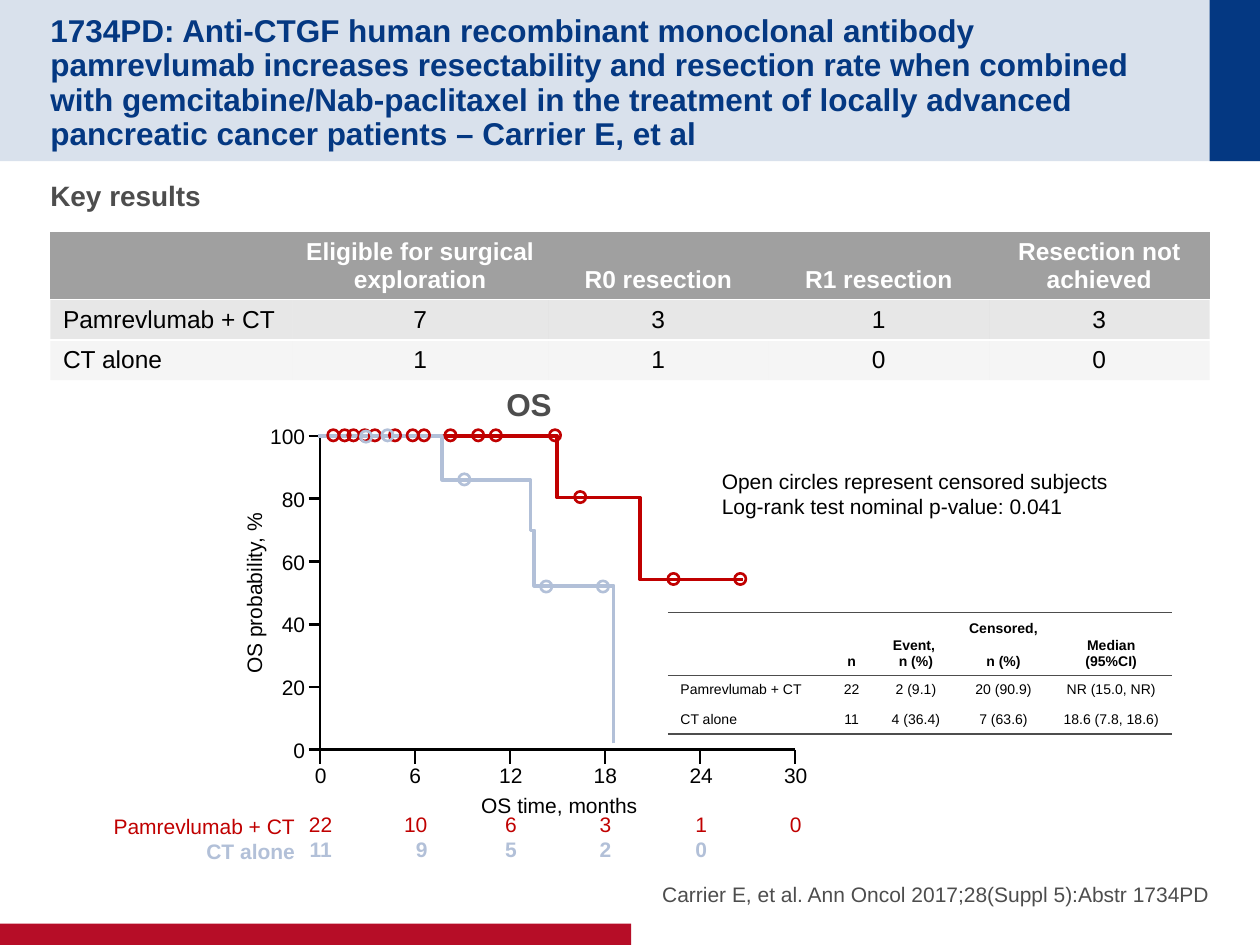
from typing import NamedTuple
from lxml.etree import SubElement
from pptx import Presentation
from pptx.dml.color import RGBColor as RGB
from pptx.enum.shapes import MSO_CONNECTOR as LINK, MSO_SHAPE as SHAPE
from pptx.enum.text import MSO_ANCHOR as ANCHOR, MSO_AUTO_SIZE as FIT, PP_ALIGN as ALIGN
from pptx.oxml.ns import qn
from pptx.util import Emu, Pt

PX = 9144  # EMU in one px, 100 px to the inch

NAVY = RGB(0x04, 0x38, 0x82)
CRIMSON = RGB(0xB6, 0x0D, 0x27)
RED = RGB(0xC0, 0x00, 0x00)
BLUE = RGB(0xB2, 0xC0, 0xD8)
DARK = RGB(0x4D, 0x4D, 0x4D)
GREY = RGB(0xA0, 0xA0, 0xA0)
BLACK = RGB(0, 0, 0)
WHITE = RGB(255, 255, 255)


class Box(NamedTuple):
    left: int
    top: int
    width: int
    height: int


class Band(NamedTuple):
    """Look of one table row: fill, its opacity, text and edges."""
    fill: RGB
    alpha: int
    color: RGB
    bold: bool
    edges: dict[str, RGB]


class Curve(NamedTuple):
    color: RGB
    steps: list[tuple[int, int]]
    marks: list[tuple[int, int]]


class Month(NamedTuple):
    label: str
    risk: list[str]
    align: ALIGN = ALIGN.CENTER


def emu(*sizes: float) -> list[Emu]:
    return [Emu(round(size * PX)) for size in sizes]


def write(frame, text: str, size=12, color=BLACK, bold=False,
          align=ALIGN.LEFT, before=0, after=0, lead=None) -> None:
    """Fill the first paragraph if it is empty, else add one."""
    para = frame.add_paragraph() if frame.text else frame.paragraphs[0]
    para.text = text
    para.alignment = align
    para.space_before, para.space_after = Pt(before), Pt(after)
    if lead:
        para.line_spacing = lead
    for run in para.runs:
        font = run.font
        font.name, font.size, font.bold = "Arial", Pt(size), bold
        font.color.rgb = color
    for gap in para._p.findall(qn("a:br")):
        SubElement(gap, qn("a:rPr"), sz=str(size * 100))


def label(box: Box, text="", anchor=ANCHOR.TOP, grow=True, inset=None, turn=0, **look):
    shape = slide.shapes.add_textbox(*emu(*box))
    shape.rotation = turn
    frame = shape.text_frame
    frame.word_wrap = not grow
    frame.auto_size = FIT.SHAPE_TO_FIT_TEXT if grow else FIT.NONE
    frame.vertical_anchor = anchor
    if inset is not None:
        frame.margin_left = frame.margin_right = 0
        frame.margin_top = frame.margin_bottom = emu(inset)[0]
    if text:
        write(frame, text, **look)
    return frame


def paint(fill, color: RGB, alpha: int = 100) -> None:
    fill.solid()
    fill.fore_color.rgb = color
    if alpha < 100:
        tone = fill._xPr.find(qn("a:solidFill"))[0]
        SubElement(tone, qn("a:alpha"), val=str(alpha * 1000))


def bar(box: Box, color: RGB, alpha: int = 100) -> None:
    shape = slide.shapes.add_shape(SHAPE.RECTANGLE, *emu(*box))
    shape.shadow.inherit = False
    paint(shape.fill, color, alpha)
    shape.line.fill.background()


def outline(shape, color: RGB, width: float) -> None:
    shape.shadow.inherit = False
    shape.fill.background()
    shape.line.color.rgb, shape.line.width = color, Pt(width)


def trace(points: list[tuple[int, int]], color: RGB, width: float) -> None:
    path = slide.shapes.build_freeform(*points[0], scale=PX)
    path.add_line_segments(points[1:], close=False)
    outline(path.convert_to_shape(), color, width)


def tick(x1: float, y1: float, x2: float, y2: float) -> None:
    link = slide.shapes.add_connector(LINK.STRAIGHT, *emu(x1, y1, x2, y2))
    link.line.color.rgb, link.line.width = BLACK, Pt(1.5)
    SubElement(link.element.spPr, qn("a:effectLst"))


def edge(cell, side: str, color: RGB) -> None:
    line = SubElement(cell._tc.get_or_add_tcPr(), qn(f"a:ln{side}"), w="12700")
    SubElement(SubElement(line, qn("a:solidFill")), qn("a:srgbClr"), val=str(color))


def grid(box: Box, cols: list[int], rows: list[int], size: int,
         bands: list[Band], cells: list[list[str]]) -> None:
    table = slide.shapes.add_table(len(rows), len(cols), *emu(*box)).table
    table.first_row = table.horz_banding = False
    style = table._tbl.tblPr.find(qn("a:tableStyleId"))
    style.text = "{2D5ABB26-0587-4C30-8999-92F81FD0307C}"  # no style, no grid
    for col, width in zip(table.columns, emu(*cols)):
        col.width = width
    for row, high, band, texts in zip(table.rows, emu(*rows), bands, cells):
        row.height = high
        for i, (cell, text) in enumerate(zip(row.cells, texts)):
            for side, color in band.edges.items():
                edge(cell, side, color)
            paint(cell.fill, band.fill, band.alpha)
            cell.vertical_anchor = ANCHOR.BOTTOM if band.bold else ANCHOR.MIDDLE
            write(cell.text_frame, text, size=size, color=band.color, bold=band.bold,
                  align=ALIGN.CENTER if i else ALIGN.LEFT)


deck = Presentation()
deck.slide_width, deck.slide_height = emu(1000, 750)
slide = deck.slides.add_slide(deck.slide_layouts[5])

# Bands, and the title in front of them
bar(Box(0, 0, 1000, 128), NAVY, 15)
bar(Box(960, 0, 40, 128), NAVY)
bar(Box(0, 733, 501, 17), CRIMSON)
title = slide.shapes.title
slide.shapes._spTree.append(title.element)
title.left, title.top, title.width, title.height = emu(40, 20, 901, 88)
head = title.text_frame
head.auto_size, head.word_wrap, head.vertical_anchor = FIT.NONE, True, ANCHOR.MIDDLE
head.margin_left = head.margin_right = head.margin_bottom = 0
head.margin_top = emu(5)[0]
write(head, "1734PD: Anti-CTGF human recombinant monoclonal antibody pamrevlumab increases "
      "resectability and resection rate when combined with gemcitabine/Nab-paclitaxel in the "
      "treatment of locally advanced pancreatic cancer patients – Carrier E, et al",
      size=18, color=NAVY, bold=True, lead=0.9)

# Heading and source
label(Box(40, 137, 920, 40), "Key results", grow=False, inset=5,
      size=16, color=DARK, bold=True, after=4)
label(Box(508, 667, 452, 53), "Carrier E, et al. Ann Oncol 2017;28(Suppl 5):Abstr 1734PD",
      anchor=ANCHOR.BOTTOM, grow=False, inset=0, color=DARK, align=ALIGN.RIGHT, after=4)

# Resection table
grid(Box(40, 184, 920, 117), [192, 203, 175, 175, 175], [53, 32, 32], 14,
     [Band(GREY, 100, WHITE, True, {"B": WHITE}),
      Band(GREY, 25, BLACK, False, {"T": WHITE}),
      Band(GREY, 10, BLACK, False, {})],
     [["", "Eligible for surgical exploration", "R0 resection", "R1 resection",
       "Resection not achieved"],
      ["Pamrevlumab + CT", "7", "3", "1", "3"],
      ["CT alone", "1", "1", "0", "0"]])

# Axes of the survival plot
X0, Y0, X1, Y1 = 254, 346, 631, 595
label(Box(392, 301, 57, 40), "OS", size=18, color=DARK, bold=True)
trace([(X0, Y0), (X0, Y1), (X1, Y1)], BLACK, 1.5)
label(Box(127, 456, 149, 30), "OS probability, %", turn=270, align=ALIGN.CENTER)
label(Box(371, 624, 146, 30), "OS time, months", align=ALIGN.CENTER)
for i in range(6):
    y, text = Y1 - i * (Y1 - Y0) / 5, str(20 * i)
    wide = 19 + 10 * len(text)
    tick(X0 - 9, y, X0, y)
    label(Box(252 - wide, round(y) - 15, wide, 30), text,
          anchor=ANCHOR.MIDDLE, align=ALIGN.RIGHT)

# Months with the numbers at risk below
ARMS = [(RED, False), (BLUE, True)]
MONTHS = [Month("0", ["22", "11"]), Month("6", ["10", "9"], ALIGN.RIGHT),
          Month("12", ["6", "5"]), Month("18", ["3", "2"]),
          Month("24", ["1", "0"]), Month("30", ["0"])]
for i, month in enumerate(MONTHS):
    x = X0 + i * (X1 - X0) / 5
    tick(x, Y1, x, Y1 + 11)
    frame = label(Box(round(x) - 19, 600, 39, 51 + 20 * len(month.risk)),
                  month.label, align=ALIGN.CENTER)
    for j, (count, (color, bold)) in enumerate(zip(month.risk, ARMS)):
        write(frame, count, color=color, bold=bold, align=month.align,
              before=0 if j else 13.8)
frame = label(Box(79, 641, 165, 50))
for name, (color, bold) in zip(["Pamrevlumab + CT", "CT alone"], ARMS):
    write(frame, name, color=color, bold=bold, align=ALIGN.RIGHT)

# Survival curves, then the censored subjects
CURVES = [
    Curve(RED, [(590, 460), (508, 460), (508, 395), (442, 395), (442, 346), (252, 346)],
          [(x, 341) for x in (260, 269, 276, 285, 293, 309, 323, 332, 353, 375, 389, 436)]
          + [(456, 390), (530, 455), (583, 455)]),
    Curve(BLUE, [(487, 590), (487, 465), (424, 465), (424, 421), (421, 421),
                 (421, 381), (351, 381), (351, 346), (252, 346)],
          [(429, 461), (474, 461), (364, 376), (303, 341), (286, 342)]),
]
for curve in CURVES:
    trace(curve.steps, curve.color, 2)
for curve in CURVES:
    for x, y in curve.marks:
        ring = slide.shapes.add_shape(SHAPE.OVAL, *emu(x, y, 9, 9))
        outline(ring, curve.color, 1.5)

# Note and survival table
label(Box(563, 367, 335, 50),
      "Open circles represent censored subjects\nLog-rank test nominal p-value: 0.041")
grid(Box(530, 486, 400, 96), [127, 38, 64, 75, 96], [50, 23, 23], 8,
     [Band(WHITE, 100, BLACK, True, {"T": DARK, "B": DARK}),
      Band(WHITE, 100, BLACK, False, {"T": DARK, "B": WHITE}),
      Band(WHITE, 100, BLACK, False, {"T": WHITE, "B": DARK})],
     [["", "n", "Event, \nn (%)", "Censored, \nn (%)", "Median\n(95%CI)"],
      ["Pamrevlumab + CT", "22", "2 (9.1)", "20 (90.9)", "NR (15.0, NR)"],
      ["CT alone", "11", "4 (36.4)", "7 (63.6)", "18.6 (7.8, 18.6)"]])

deck.save("out.pptx")
